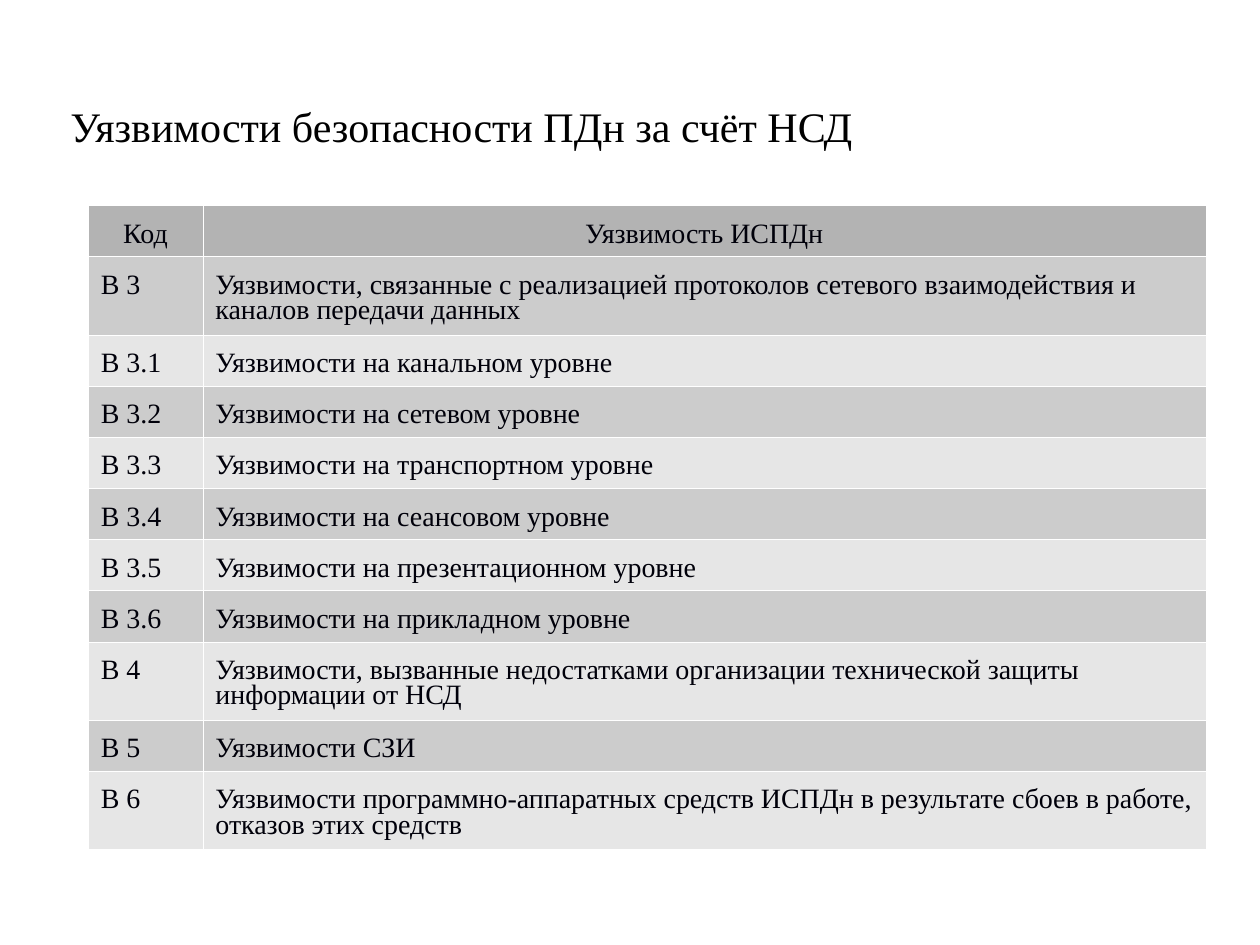
from dataclasses import dataclass

from lxml.etree import SubElement
from pptx import Presentation
from pptx.dml.color import RGBColor
from pptx.enum.text import MSO_ANCHOR, PP_ALIGN
from pptx.oxml.ns import qn
from pptx.util import Inches, Pt


@dataclass(frozen=True)
class Theme:
    font: str = "Times New Roman"
    title_size: int = 24
    table_size: int = 16
    title_color: str = "000000"
    table_color: str = "00000A"
    header_fill: str = "B3B3B3"
    band_fills: tuple = ("CCCCCC", "E6E6E6")
    border_color: str = "FFFFFF"
    border_width: float = 0.06
    line_spacing: float = 0.81


HEADER = ("Код", "Уязвимость ИСПДн")
VULNERABILITIES = [
    ("В 3", "Уязвимости, связанные с реализацией протоколов сетевого "
            "взаимодействия и каналов передачи данных"),
    ("В 3.1", "Уязвимости на канальном уровне"),
    ("В 3.2", "Уязвимости на сетевом уровне"),
    ("В 3.3", "Уязвимости на транспортном уровне"),
    ("В 3.4", "Уязвимости на сеансовом уровне"),
    ("В 3.5", "Уязвимости на презентационном уровне"),
    ("В 3.6", "Уязвимости на прикладном уровне"),
    ("В 4", "Уязвимости, вызванные недостатками организации технической "
            "защиты информации от НСД"),
    ("В 5", "Уязвимости СЗИ"),
    ("В 6", "Уязвимости программно-аппаратных средств ИСПДн в результате "
            "сбоев в работе, отказов этих средств"),
]
COLUMN_WIDTHS = (0.91, 7.96)
ROW_HEIGHT = 0.39
TALL_ROW_HEIGHT = 0.61
LINE_CAPACITY = 75


def apply_format(target, values):
    for name, value in values.items():
        setattr(target, name, value)


def margins(left, top, right, bottom):
    return {
        "margin_left": Inches(left),
        "margin_top": Inches(top),
        "margin_right": Inches(right),
        "margin_bottom": Inches(bottom),
    }


class PageBuilder:
    def __init__(self, page, theme):
        self.page = page
        self.theme = theme

    def add_text(self, frame, text, size, color, paragraph_format):
        para = frame.paragraphs[0]
        apply_format(para, paragraph_format)
        span = para.add_run()
        span.text = text
        apply_format(span.font, {"name": self.theme.font, "size": Pt(size)})
        span.font.color.rgb = RGBColor.from_string(color)

    def title(self, text, left, top, width, height):
        box = self.page.shapes.add_textbox(
            Inches(left), Inches(top), Inches(width), Inches(height))
        frame = box.text_frame
        apply_format(frame, {
            "word_wrap": True,
            "vertical_anchor": MSO_ANCHOR.TOP,
            **margins(0.1, 0.09, 0.1, 0.05),
        })
        self.add_text(frame, text, self.theme.title_size,
                      self.theme.title_color, {"alignment": PP_ALIGN.LEFT})

    def border(self, cell):
        properties = cell._tc.get_or_add_tcPr()
        for index, side in enumerate(("a:lnL", "a:lnR", "a:lnT", "a:lnB")):
            line = properties.makeelement(
                qn(side), {"w": str(Pt(self.theme.border_width))})
            fill = SubElement(line, qn("a:solidFill"))
            SubElement(fill, qn("a:srgbClr"), val=self.theme.border_color)
            properties.insert(index, line)

    def cell(self, cell, text, fill, alignment):
        apply_format(cell, {
            "vertical_anchor": MSO_ANCHOR.TOP,
            **margins(0.1, 0.14, 0.1, 0.05),
        })
        cell.fill.solid()
        cell.fill.fore_color.rgb = RGBColor.from_string(fill)
        self.border(cell)
        self.add_text(cell.text_frame, text, self.theme.table_size,
                      self.theme.table_color,
                      {"alignment": alignment,
                       "line_spacing": self.theme.line_spacing})

    def table(self, header, records, left, top):
        rows = [header, *records]
        heights = [TALL_ROW_HEIGHT if len(row[1]) > LINE_CAPACITY
                   else ROW_HEIGHT for row in rows]
        table = self.page.shapes.add_table(
            len(rows), len(header), Inches(left), Inches(top),
            Inches(sum(COLUMN_WIDTHS)), Inches(sum(heights))).table
        apply_format(table, {"first_row": False, "horz_banding": False})
        for column, width in zip(table.columns, COLUMN_WIDTHS):
            column.width = Inches(width)
        for index, (texts, height) in enumerate(zip(rows, heights)):
            table.rows[index].height = Inches(height)
            if index == 0:
                fill, alignment = self.theme.header_fill, PP_ALIGN.CENTER
            else:
                fill = self.theme.band_fills[(index - 1) % 2]
                alignment = PP_ALIGN.LEFT
            for cell, text in zip(table.rows[index].cells, texts):
                self.cell(cell, text, fill, alignment)


def main():
    deck = Presentation()
    apply_format(deck, {"slide_width": Inches(10), "slide_height": Inches(7.5)})
    page = deck.slides.add_slide(deck.slide_layouts[6])
    builder = PageBuilder(page, Theme())
    builder.title("Уязвимости безопасности ПДн за счёт НСД",
                  0.46, 0.71, 8.91, 0.71)
    builder.table(HEADER, VULNERABILITIES, 0.7, 1.63)
    deck.save("out.pptx")


if __name__ == "__main__":
    main()
